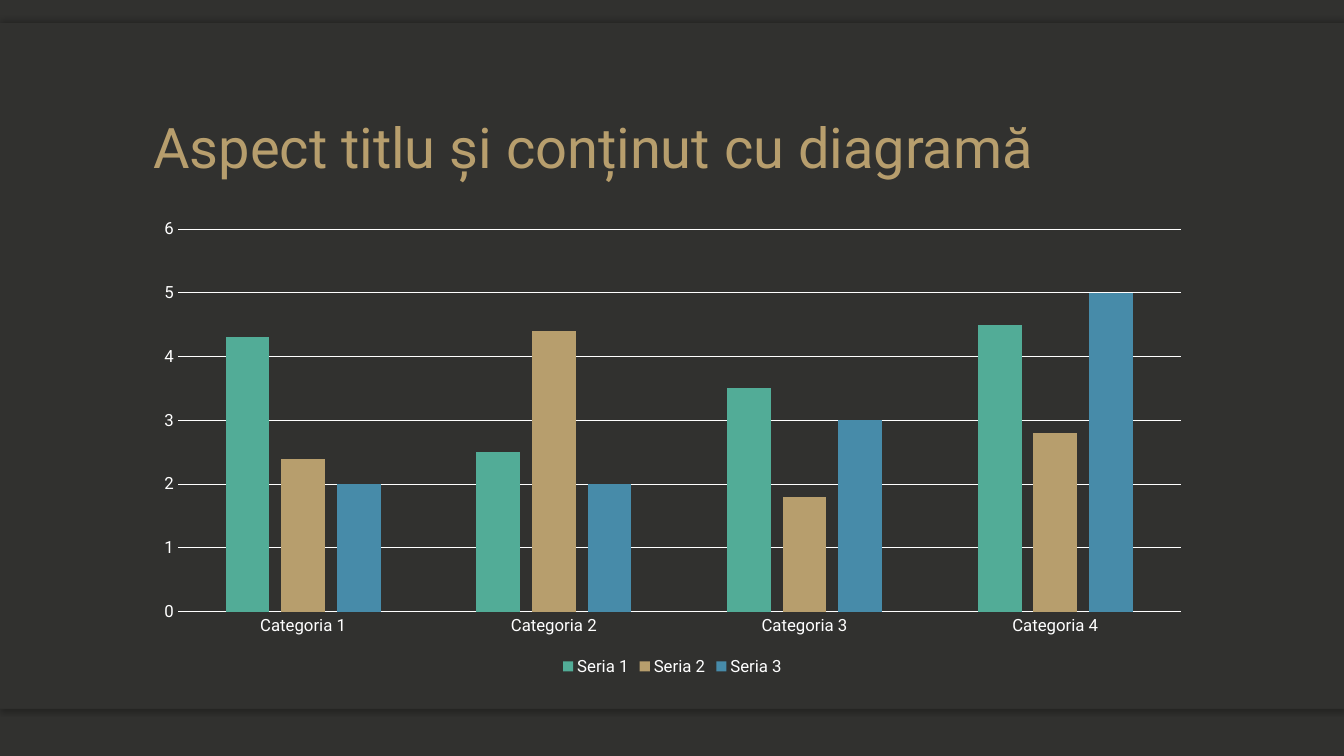
from dataclasses import dataclass

from lxml.etree import SubElement
from pptx import Presentation
from pptx.chart.data import CategoryChartData
from pptx.dml.color import RGBColor
from pptx.enum.chart import XL_CHART_TYPE, XL_LEGEND_POSITION, XL_TICK_MARK
from pptx.enum.shapes import MSO_SHAPE
from pptx.enum.text import MSO_ANCHOR, MSO_AUTO_SIZE, PP_ALIGN
from pptx.oxml.ns import qn
from pptx.util import Inches, Pt

FONT = "Roboto"
COLORS = {
    "ground": "31312F",
    "shadow": "000000",
    "text": "FFFFFF",
    "green": "52AC97",
    "gold": "B79E6D",
    "blue": "478BA9",
}
WIDTH, HEIGHT = 13.33, 7.5
PANEL_TOP, PANEL_HEIGHT, EDGE_HEIGHT = 0.23, 6.8, 0.49
MARGIN, CONTENT_WIDTH = 1.42, 10.5


@dataclass(frozen=True)
class Band:
    top: float
    height: float
    shadow_angle: int | None = None


@dataclass(frozen=True)
class Series:
    name: str
    color: str
    values: tuple[float, ...]


BANDS = [
    Band(PANEL_TOP + PANEL_HEIGHT - EDGE_HEIGHT, EDGE_HEIGHT, 90),
    Band(PANEL_TOP, EDGE_HEIGHT, 270),
    Band(PANEL_TOP, PANEL_HEIGHT),
]
CATEGORIES = [f"Categoria {n}" for n in range(1, 5)]
SERIES = [
    Series("Seria 1", "green", (4.3, 2.5, 3.5, 4.5)),
    Series("Seria 2", "gold", (2.4, 4.4, 1.8, 2.8)),
    Series("Seria 3", "blue", (2, 2, 3, 5)),
]


def rgb(name: str) -> RGBColor:
    return RGBColor.from_string(COLORS[name])


def style_font(font, size: float, color: str = "text") -> None:
    font.name = FONT
    font.size = Pt(size)
    font.bold = False
    font.color.rgb = rgb(color)


def style_line(line) -> None:
    line.color.rgb = rgb("text")
    line.width = Pt(0.75)


def add_band(s, band: Band) -> None:
    sp = s.shapes.add_shape(
        MSO_SHAPE.RECTANGLE, 0, Inches(band.top), Inches(WIDTH), Inches(band.height)
    )
    sp.fill.solid()
    sp.fill.fore_color.rgb = rgb("ground")
    sp.line.fill.background()
    sp.shadow.inherit = False
    if band.shadow_angle is not None:
        effects = sp._element.spPr.find(qn("a:effectLst"))
        shadow = SubElement(
            effects, qn("a:outerShdw"), blurRad=str(Pt(4)), dist=str(Pt(2)),
            dir=str(band.shadow_angle * 60000), algn="ctr", rotWithShape="0",
        )
        color = SubElement(shadow, qn("a:srgbClr"), val=COLORS["shadow"])
        SubElement(color, qn("a:alpha"), val="25000")


def set_title(s, text: str) -> None:
    sp = s.shapes.title
    s.shapes._spTree.append(sp._element)
    sp.left, sp.top = Inches(MARGIN), Inches(0.46)
    sp.width, sp.height = Inches(CONTENT_WIDTH), Inches(1.38)
    tf = sp.text_frame
    tf.text = text
    tf.word_wrap = True
    tf.auto_size = MSO_AUTO_SIZE.NONE
    tf.vertical_anchor = MSO_ANCHOR.BOTTOM
    p = tf.paragraphs[0]
    p.alignment = PP_ALIGN.LEFT
    p.line_spacing = 0.9
    style_font(p.font, 40, "gold")


def add_column_chart(s) -> None:
    data = CategoryChartData()
    data.categories = CATEGORIES
    for series in SERIES:
        data.add_series(series.name, series.values)
    chart = s.shapes.add_chart(
        XL_CHART_TYPE.COLUMN_CLUSTERED, Inches(MARGIN), Inches(2.08),
        Inches(CONTENT_WIDTH), Inches(4.67), data,
    ).chart
    style_font(chart.font, 10)
    chart.has_title = False
    chart.has_legend = True
    chart.legend.position = XL_LEGEND_POSITION.BOTTOM
    chart.legend.include_in_layout = False
    style_font(chart.legend.font, 12)

    plot = chart.plots[0]
    plot.vary_by_categories = False
    plot.gap_width, plot.overlap = 219, -27
    for drawn, series in zip(plot.series, SERIES):
        drawn.format.fill.solid()
        drawn.format.fill.fore_color.rgb = rgb(series.color)

    for axis in (chart.category_axis, chart.value_axis):
        axis.major_tick_mark = axis.minor_tick_mark = XL_TICK_MARK.NONE
        style_font(axis.tick_labels.font, 12)
    style_line(chart.category_axis.format.line)
    chart.value_axis.format.line.fill.background()
    chart.value_axis.has_major_gridlines = True
    style_line(chart.value_axis.major_gridlines.format.line)


def main() -> None:
    prs = Presentation()
    prs.slide_width, prs.slide_height = Inches(WIDTH), Inches(HEIGHT)
    s = prs.slides.add_slide(prs.slide_layouts[5])
    s.background.fill.solid()
    s.background.fill.fore_color.rgb = rgb("ground")
    for band in BANDS:
        add_band(s, band)
    set_title(s, "Aspect titlu și conținut cu diagramă")
    add_column_chart(s)
    prs.save("out.pptx")


if __name__ == "__main__":
    main()
